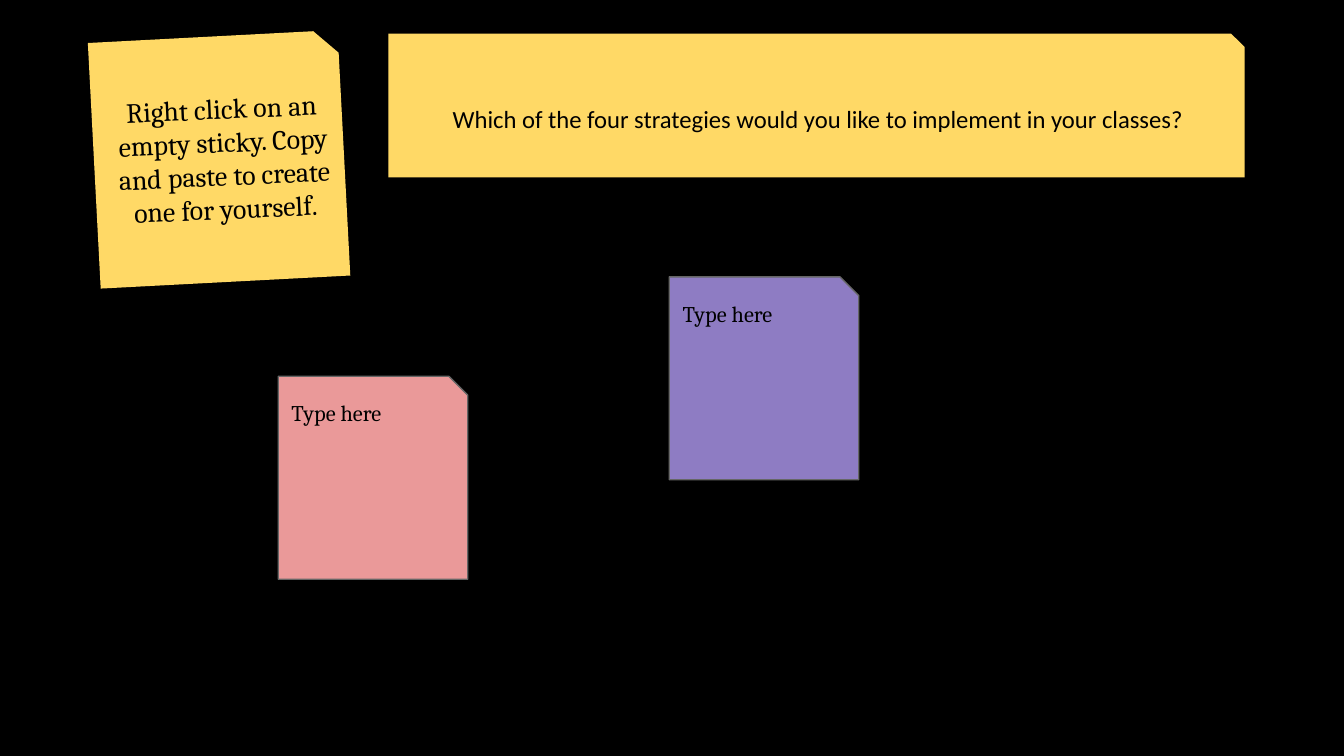
from pptx import Presentation
from pptx.dml.color import RGBColor
from pptx.enum import text as t
from pptx.util import Inches, Pt

BLACK, GOLD, GREY = "000000", "FFD966", "666666"
TITLE = "Which of the four strategies would you like to implement in your classes?"
GUIDE = "Right click on an empty sticky. Copy and paste to create one for yourself."
# left, top, fill, text
STICKIES = [(2.07, 2.8, "EA9999", "Type here"),
            (4.98, 2.06, "8E7CC3", "Type here")]


def color(code):
    return RGBColor.from_string(code)


def note(shapes, box, cut, fill, line=None, turn=0):
    """Draw a sheet with its top right corner cut off."""
    x, y, w, h = box
    dx, dy = cut
    points = [(x + w - dx, y), (x + w, y + dy), (x + w, y + h), (x, y + h)]
    pen = shapes.build_freeform(Inches(x), Inches(y))
    pen.add_line_segments([(Inches(a), Inches(b)) for a, b in points])
    sheet = pen.convert_to_shape()
    sheet.shadow.inherit = False
    sheet.fill.solid()
    sheet.fill.fore_color.rgb = color(fill)
    if line:
        sheet.line.color.rgb = color(line)
        sheet.line.width = Pt(0.75)
    else:
        sheet.line.fill.background()
    sheet.rotation = turn


def write(shape, words, size, font, align=t.PP_ALIGN.LEFT,
          anchor=t.MSO_ANCHOR.TOP, fit=t.MSO_AUTO_SIZE.NONE):
    frame = shape.text_frame
    frame.word_wrap = True
    frame.auto_size = fit
    frame.vertical_anchor = anchor
    frame.margin_left = frame.margin_right = Inches(0.1)
    frame.margin_top = frame.margin_bottom = Inches(0.1)
    para = frame.paragraphs[0]
    para.alignment = align
    run = para.add_run()
    run.text = words
    run.font.size = Pt(size)
    run.font.name = font
    run.font.color.rgb = color(BLACK)


def place(*box):
    return [Inches(v) for v in box]


# Widescreen slide, 16:9
deck = Presentation()
deck.slide_width = Inches(10)
deck.slide_height = deck.slide_width * 9 // 16
slide = deck.slides.add_slide(deck.slide_layouts[5])
slide.background.fill.solid()
slide.background.fill.fore_color.rgb = color(BLACK)
shapes = slide.shapes

# Banner and tilted guide note
note(shapes, (2.89, 0.25, 6.37, 1.07), (0.1, 0.1), GOLD)
note(shapes, (0.7, 0.27, 1.86, 1.83), (0.18, 0.17), GOLD, turn=357)

# Title, brought in front of the banner
title = shapes.title
title.left, title.top, title.width, title.height = place(2.97, 0.48, 6.23, 0.61)
write(title, TITLE, 13.2, "Calibri", t.PP_ALIGN.CENTER, t.MSO_ANCHOR.BOTTOM)
title.element.getparent().append(title.element)

# Guide text
guide = shapes.add_textbox(*place(0.74, 0.58, 1.86, 1.44))
guide.rotation = 357.5
write(guide, GUIDE, 14.9, "Cambria", t.PP_ALIGN.CENTER)

# Stickies to type on
for x, y, fill, words in STICKIES:
    group = shapes.add_group_shape()
    note(group.shapes, (x, y, 1.41, 1.51), (0.14, 0.14), fill, GREY)
    label = group.shapes.add_textbox(*place(x, y + 0.07, 1.35, 0.39))
    write(label, words, 12, "Cambria", fit=t.MSO_AUTO_SIZE.SHAPE_TO_FIT_TEXT)

deck.save("out.pptx")
